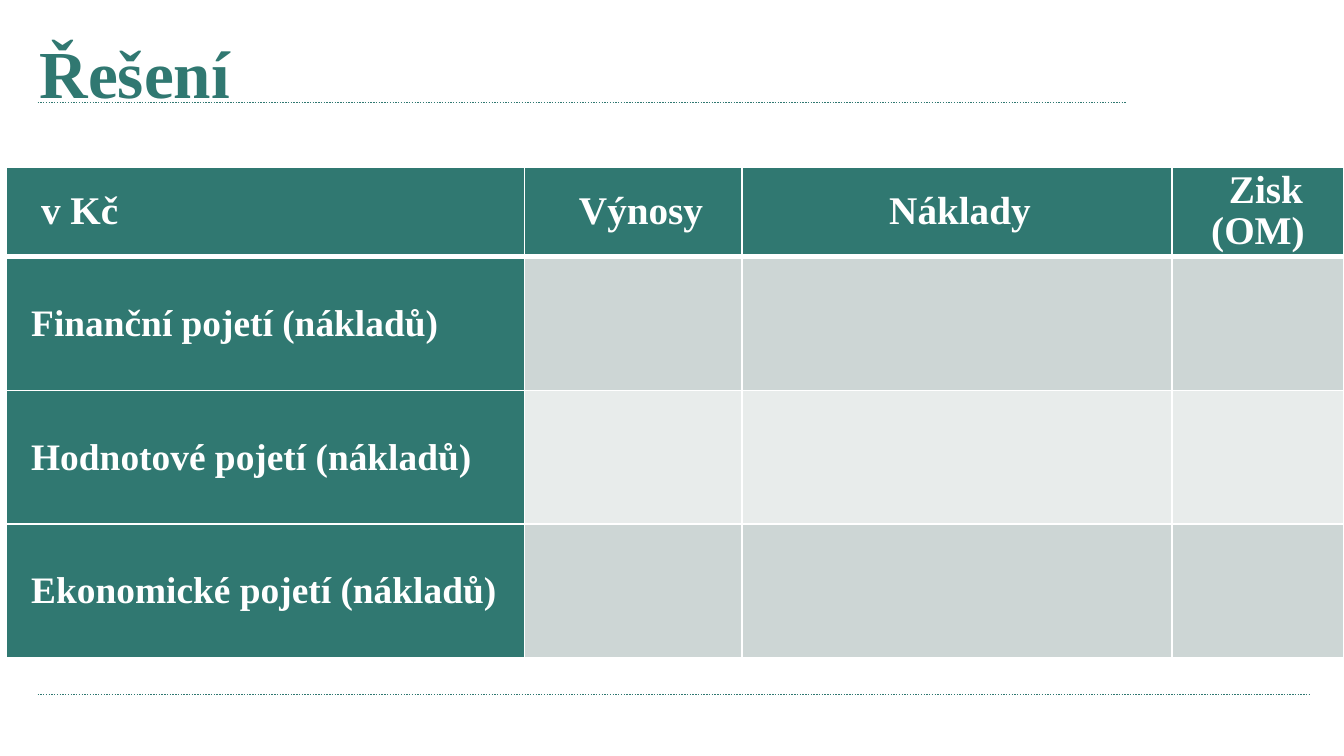
from pptx import Presentation
from pptx.dml.color import RGBColor
from pptx.enum.dml import MSO_LINE as Dash
from pptx.enum.shapes import MSO_CONNECTOR as Link
from pptx.enum.text import MSO_ANCHOR as Anchor, PP_ALIGN as Align
from pptx.oxml import parse_xml
from pptx.oxml.ns import nsdecls
from pptx.util import Cm, Pt

GREEN, WHITE = "307871", "FFFFFF"
BANDS = ["CDD6D5", "E8ECEB"]
HEAD = [" v Kč", "Výnosy", "Náklady ", "Zisk (OM)"]
NAMES = ["Finanční", "Hodnotové", "Ekonomické"]
COLS = [9.8, 4.11, 8.13, 3.25]
ROWS = [1.62, 2.53, 2.53, 2.53]


def color(code):
    return RGBColor.from_string(code)


def write(para, text, size, code):
    run = para.add_run()
    run.text = text
    run.font.name = "Times New Roman"
    run.font.size = Pt(size)
    run.font.bold = True
    run.font.color.rgb = color(code)


deck = Presentation()
deck.slide_width, deck.slide_height = Cm(25.4), Cm(14.29)
slide = deck.slides.add_slide(deck.slide_layouts[6])
shapes = slide.shapes

# Dotted rules under the title and above the footer
for end, y in [(21.3, 1.94), (24.77, 13.13)]:
    rule = shapes.add_connector(Link.STRAIGHT, Cm(0.71), Cm(y), Cm(end), Cm(y))
    rule.line.color.rgb = color(GREEN)
    rule.line.width = Pt(0.75)
    rule.line.dash_style = Dash.ROUND_DOT
    rule._element.spPr.append(parse_xml(f"<a:effectLst {nsdecls('a')}/>"))

# Title
title = shapes.add_textbox(Cm(0.5), Cm(0.36), Cm(22.4), Cm(2)).text_frame
title.word_wrap = True
title.vertical_anchor = Anchor.MIDDLE
write(title.paragraphs[0], "Řešení", 36, GREEN)

# Table
grid = [HEAD] + [[f"{name} pojetí (nákladů)", "", "", ""] for name in NAMES]
table = shapes.add_table(len(ROWS), len(COLS), Cm(0.11), Cm(3.16),
                         Cm(sum(COLS)), Cm(sum(ROWS))).table
for col, width in zip(table.columns, COLS):
    col.width = Cm(width)
for row, height in zip(table.rows, ROWS):
    row.height = Cm(height)

for r, texts in enumerate(grid):
    for c, text in enumerate(texts):
        cell = table.cell(r, c)
        cell.vertical_anchor = Anchor.MIDDLE
        cell.margin_left = cell.margin_right = Cm(0.18)
        cell.margin_top = cell.margin_bottom = 0

        # White borders, thicker between the header and the body
        props = cell._tc.get_or_add_tcPr()
        for side in ["L", "R", "T", "B"]:
            thick = (r, side) in [(0, "B"), (1, "T")]
            props.append(parse_xml(
                f'<a:ln{side} {nsdecls("a")} w="{Pt(3 if thick else 1)}">'
                f'<a:solidFill><a:srgbClr val="{WHITE}"/></a:solidFill>'
                f'</a:ln{side}>'))
        cell.fill.solid()
        label = r == 0 or c == 0
        cell.fill.fore_color.rgb = color(GREEN if label else BANDS[(r - 1) % 2])

        if text:
            para = cell.text_frame.paragraphs[0]
            para.alignment = Align.CENTER if c else Align.JUSTIFY
            para._p.get_or_add_pPr().set("indent", str(Cm(0.3)))
            if r == 0:
                para.line_spacing = 0.95
            write(para, text, 20 if r else 21, WHITE)

deck.save("out.pptx")
